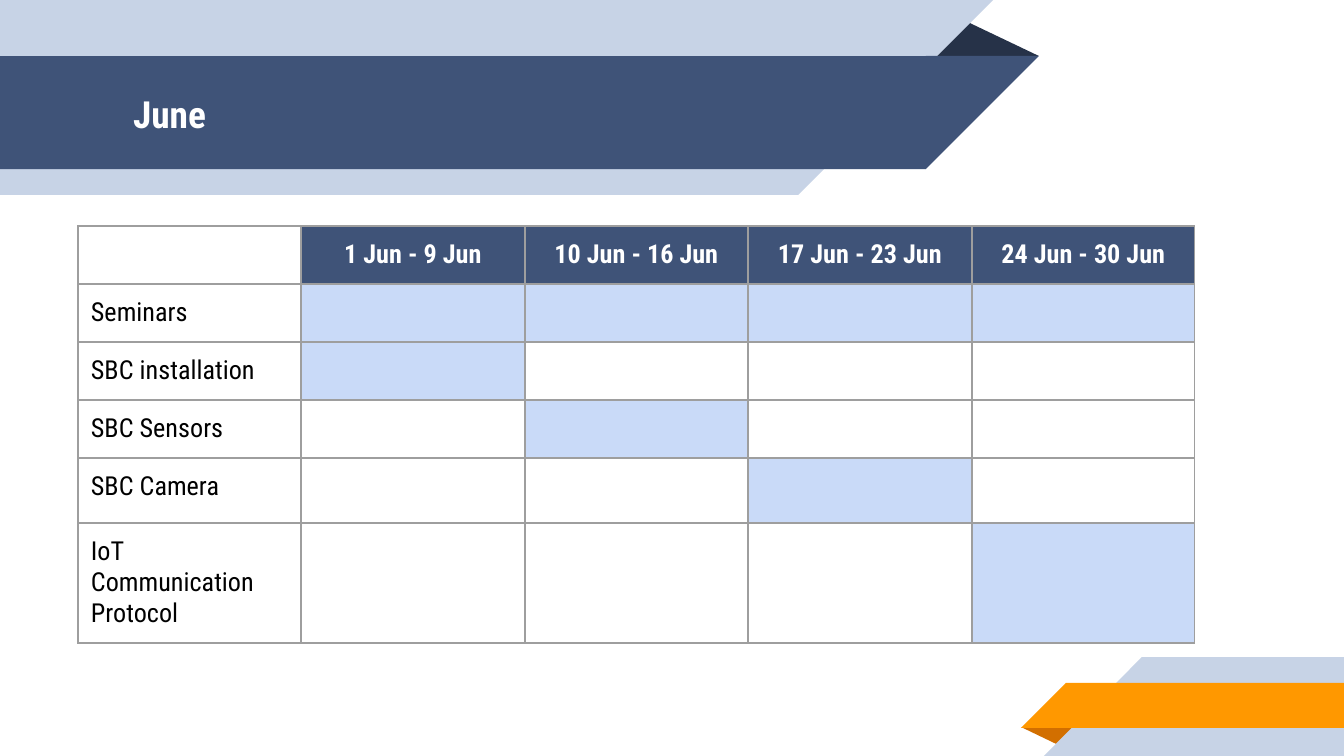
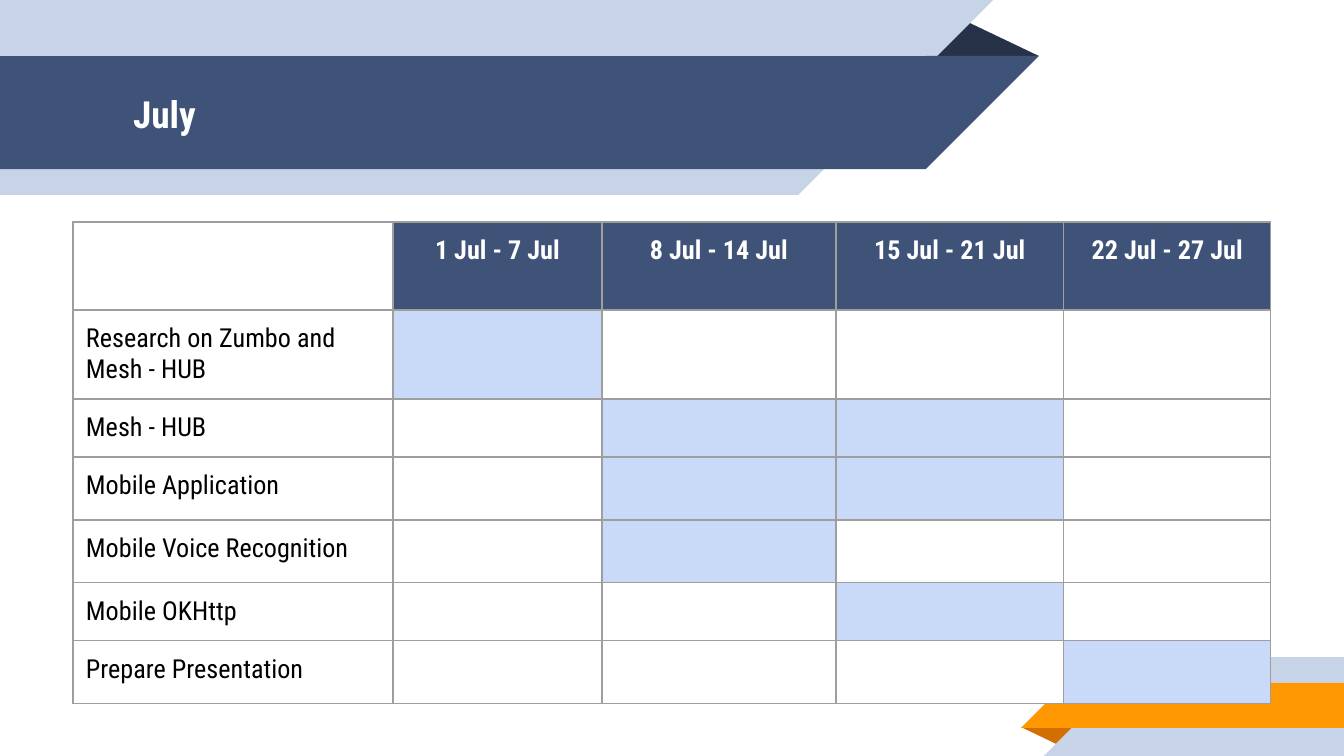
from itertools import pairwise

from lxml import etree
from pptx import Presentation
from pptx.dml.color import RGBColor
from pptx.enum.shapes import MSO_SHAPE
from pptx.enum.text import MSO_ANCHOR, PP_ALIGN
from pptx.oxml.ns import qn
from pptx.util import Pt

RECT = MSO_SHAPE.RECTANGLE
CORNER = MSO_SHAPE.RIGHT_TRIANGLE
FOLD = MSO_SHAPE.ISOSCELES_TRIANGLE
LEFT, CENTER = PP_ALIGN.LEFT, PP_ALIGN.CENTER
TOP, MIDDLE = MSO_ANCHOR.TOP, MSO_ANCHOR.MIDDLE

NAVY = RGBColor(0x3F, 0x53, 0x78)
DARK = RGBColor(0x26, 0x32, 0x48)
PALE = RGBColor(0xC7, 0xD3, 0xE6)
ORANGE = RGBColor(0xFF, 0x98, 0x00)
RUST = RGBColor(0xD2, 0x6F, 0x00)
BUSY = RGBColor(0xC9, 0xDA, 0xF8)
WHITE = RGBColor(0xFF, 0xFF, 0xFF)
BLACK = RGBColor(0x00, 0x00, 0x00)
GRID = RGBColor(0x9E, 0x9E, 0x9E)

FONT = "Roboto Condensed"
CELL_SIZE = 14
INSET = 13
FOLD_APEX = 0.32
WIDTH, HEIGHT = 1344, 756

HEADER_BANDS = [
    (FOLD, DARK, 925, 19, 114, 37),
    (RECT, PALE, 0, 0, 798, 195),
    (CORNER, PALE, 798, 0, 195, 195),
    (RECT, NAVY, 0, 56, 926, 113),
    (CORNER, NAVY, 926, 56, 113, 113),
]
FOOTER_BANDS = [
    (FOLD, RUST, 1021, 727, 58, 19),
    (RECT, PALE, 1142, 657, 202, 99),
    (CORNER, PALE, 1044, 657, 98, 99),
    (RECT, ORANGE, 1066, 683, 278, 45),
    (CORNER, ORANGE, 1021, 683, 45, 45),
]
TITLE_BOX = (120, 57, 773, 113)

MONTHS = [
    {
        "title": "June",
        "weeks": ["1 Jun - 9 Jun", "10 Jun - 16 Jun", "17 Jun - 23 Jun", "24 Jun - 30 Jun"],
        "tasks": [
            ("Seminars", {1, 2, 3, 4}),
            ("SBC installation", {1}),
            ("SBC Sensors", {2}),
            ("SBC Camera", {3}),
            ("IoT Communication Protocol", {4}),
        ],
        "x_edges": [78, 301, 525, 748, 972, 1195],
        "y_edges": [226, 284, 342, 400, 458, 523, 643],
    },
    {
        "title": "July",
        "weeks": ["1 Jul - 7 Jul", "8 Jul - 14 Jul", "15 Jul - 21 Jul", "22 Jul - 27 Jul"],
        "tasks": [
            ("Research on Zumbo and Mesh - HUB", {1}),
            ("Mesh - HUB", {2, 3}),
            ("Mobile Application", {2, 3}),
            ("Mobile Voice Recognition", {2}),
            ("Mobile OKHttp", {3}),
            ("Prepare Presentation", {4}),
        ],
        "x_edges": [73, 393, 602, 836, 1064, 1271],
        "y_edges": [222, 310, 399, 457, 520, 583, 641, 704],
    },
]


def px(n):
    return round(n * 914400 / 134.4)


def write(tf, text, size=CELL_SIZE, color=BLACK, bold=False, align=LEFT):
    p = tf.paragraphs[0]
    p.alignment = align
    if not text:
        p._p.get_or_add_endParaRPr().set("sz", str(size * 100))
        return
    r = p.add_run()
    r.text = text
    r.font.name = FONT
    r.font.size = Pt(size)
    r.font.bold = bold
    r.font.color.rgb = color


def set_insets(target):
    target.margin_left = target.margin_right = px(INSET)
    target.margin_top = target.margin_bottom = px(INSET)


def add_bands(s, bands, rotations):
    for kind, color, *box in bands:
        sp = s.shapes.add_shape(kind, *map(px, box))
        sp.shadow.inherit = False
        sp.fill.solid()
        sp.fill.fore_color.rgb = color
        sp.line.fill.background()
        sp.rotation = rotations[kind]
        if kind == FOLD:
            sp.adjustments[0] = FOLD_APEX
        else:
            sp._element.spPr.xfrm.set("flipH", "1")


def add_title(s, text):
    tf = s.shapes.add_textbox(*map(px, TITLE_BOX)).text_frame
    tf.word_wrap = True
    tf.vertical_anchor = MIDDLE
    set_insets(tf)
    write(tf, text, size=20, color=WHITE, bold=True)


def add_borders(cell):
    pr = cell._tc.get_or_add_tcPr()
    for i, side in enumerate(("lnL", "lnR", "lnT", "lnB")):
        ln = etree.Element(qn(f"a:{side}"), w=str(Pt(0.75)))
        fill = etree.SubElement(ln, qn("a:solidFill"))
        etree.SubElement(fill, qn("a:srgbClr"), val=str(GRID))
        pr.insert(i, ln)


def add_schedule(s, month):
    xs, ys = month["x_edges"], month["y_edges"]
    box = (xs[0], ys[0], xs[-1] - xs[0], ys[-1] - ys[0])
    table = s.shapes.add_table(len(ys) - 1, len(xs) - 1, *map(px, box)).table
    table.first_row = table.horz_banding = False
    for col, (a, b) in zip(table.columns, pairwise(xs)):
        col.width = px(b - a)
    for row, (a, b) in zip(table.rows, pairwise(ys)):
        row.height = px(b - a)

    names = [""] + [name for name, _ in month["tasks"]]
    busy = [set()] + [weeks for _, weeks in month["tasks"]]
    for i, row in enumerate(table.rows):
        for j, cell in enumerate(row.cells):
            header = i == 0 and j > 0
            set_insets(cell)
            cell.vertical_anchor = TOP
            cell.fill.solid()
            cell.fill.fore_color.rgb = NAVY if header else BUSY if j in busy[i] else WHITE
            add_borders(cell)
            if header:
                write(cell.text_frame, month["weeks"][j - 1], color=WHITE, bold=True, align=CENTER)
            else:
                write(cell.text_frame, names[i] if j == 0 else "")


def main():
    prs = Presentation()
    prs.slide_width, prs.slide_height = px(WIDTH), px(HEIGHT)
    for month in MONTHS:
        s = prs.slides.add_slide(prs.slide_layouts[6])
        add_bands(s, HEADER_BANDS, {FOLD: 0, RECT: 180, CORNER: 180})
        add_bands(s, FOOTER_BANDS, {FOLD: 180, RECT: 0, CORNER: 0})
        add_title(s, month["title"])
        add_schedule(s, month)
    prs.save("out.pptx")


if __name__ == "__main__":
    main()
